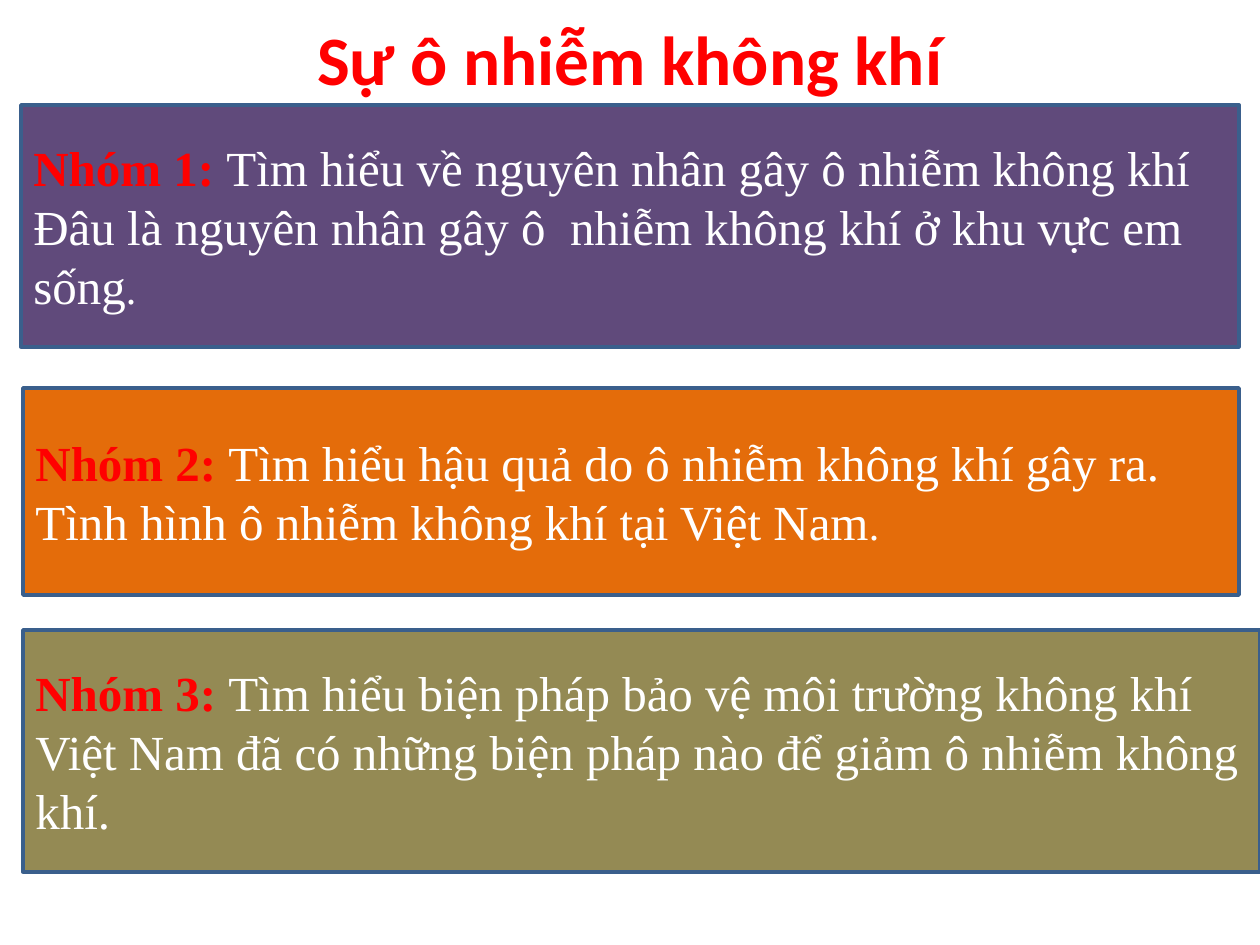
"""Builds the slide that assigns air pollution topics to three groups."""
from dataclasses import dataclass

from pptx import Presentation
from pptx.dml.color import RGBColor
from pptx.enum.shapes import MSO_SHAPE
from pptx.enum.text import MSO_ANCHOR, MSO_AUTO_SIZE, PP_ALIGN
from pptx.util import Emu, Pt

PX_PER_INCH = 126


@dataclass(frozen=True)
class Theme:
    accent: RGBColor = RGBColor(0xFF, 0x00, 0x00)
    text: RGBColor = RGBColor(0xFF, 0xFF, 0xFF)
    border: RGBColor = RGBColor(0x3A, 0x5F, 0x8C)
    title_font: str = "Calibri"
    body_font: str = "Times New Roman"
    title_size: float = 39.6
    body_size: int = 28
    stop_size: int = 24
    border_width: int = 2


@dataclass(frozen=True)
class Box:
    left: int
    top: int
    width: int
    height: int


@dataclass(frozen=True)
class Group:
    box: Box
    fill: str
    label: str
    topic: str
    detail: str
    small_stop: str = ""


THEME = Theme()
TITLE_BOX = Box(63, 10, 1134, 95)
GROUPS = (
    Group(Box(21, 105, 1218, 242), "604A7B", "Nhóm 1: ",
          "Tìm hiểu về nguyên nhân gây ô nhiễm không khí",
          "Đâu là nguyên nhân gây ô  nhiễm không khí ở khu vực em sống", "."),
    Group(Box(23, 388, 1216, 207), "E46C0A", "Nhóm 2: ",
          "Tìm hiểu hậu quả do ô nhiễm không khí gây ra.",
          "Tình hình ô nhiễm không khí tại Việt Nam", "."),
    Group(Box(23, 630, 1237, 242), "948A54", "Nhóm 3: ",
          "Tìm hiểu biện pháp bảo vệ môi trường không khí",
          "Việt Nam đã có những biện pháp nào để giảm ô nhiễm không khí."),
)


def px(length: int) -> Emu:
    return Emu(round(length * 914400 / PX_PER_INCH))


def edges(box: Box) -> tuple[Emu, Emu, Emu, Emu]:
    return px(box.left), px(box.top), px(box.width), px(box.height)


def format_title(title, text: str) -> None:
    title.left, title.top, title.width, title.height = edges(TITLE_BOX)
    frame = title.text_frame
    frame.text = text
    frame.auto_size = MSO_AUTO_SIZE.NONE
    frame.vertical_anchor = MSO_ANCHOR.MIDDLE
    paragraph = frame.paragraphs[0]
    paragraph.alignment = PP_ALIGN.CENTER
    font = paragraph.font
    font.name, font.size, font.bold = THEME.title_font, Pt(THEME.title_size), True
    font.color.rgb = THEME.accent


def add_paragraph_style(paragraph) -> None:
    paragraph.alignment = PP_ALIGN.LEFT
    font = paragraph.font
    font.name, font.size = THEME.body_font, Pt(THEME.body_size)
    font.color.rgb = THEME.text


def add_run(paragraph, text: str):
    run = paragraph.add_run()
    run.text = text
    return run


def add_group(slide, group: Group) -> None:
    shape = slide.shapes.add_shape(MSO_SHAPE.RECTANGLE, *edges(group.box))
    shape.shadow.inherit = False
    shape.fill.solid()
    shape.fill.fore_color.rgb = RGBColor.from_string(group.fill)
    shape.line.color.rgb = THEME.border
    shape.line.width = Pt(THEME.border_width)

    frame = shape.text_frame
    frame.word_wrap = True
    frame.vertical_anchor = MSO_ANCHOR.MIDDLE
    heading, detail = frame.paragraphs[0], frame.add_paragraph()
    for paragraph in (heading, detail):
        add_paragraph_style(paragraph)

    label = add_run(heading, group.label)
    label.font.bold = True
    label.font.color.rgb = THEME.accent
    add_run(heading, group.topic)
    add_run(detail, group.detail)
    if group.small_stop:
        add_run(detail, group.small_stop).font.size = Pt(THEME.stop_size)


def main() -> None:
    presentation = Presentation()
    presentation.slide_width, presentation.slide_height = px(1260), px(945)
    slide = presentation.slides.add_slide(presentation.slide_layouts[5])
    format_title(slide.shapes.title, "Sự ô nhiễm không khí")
    for group in GROUPS:
        add_group(slide, group)
    presentation.save("out.pptx")


if __name__ == "__main__":
    main()
